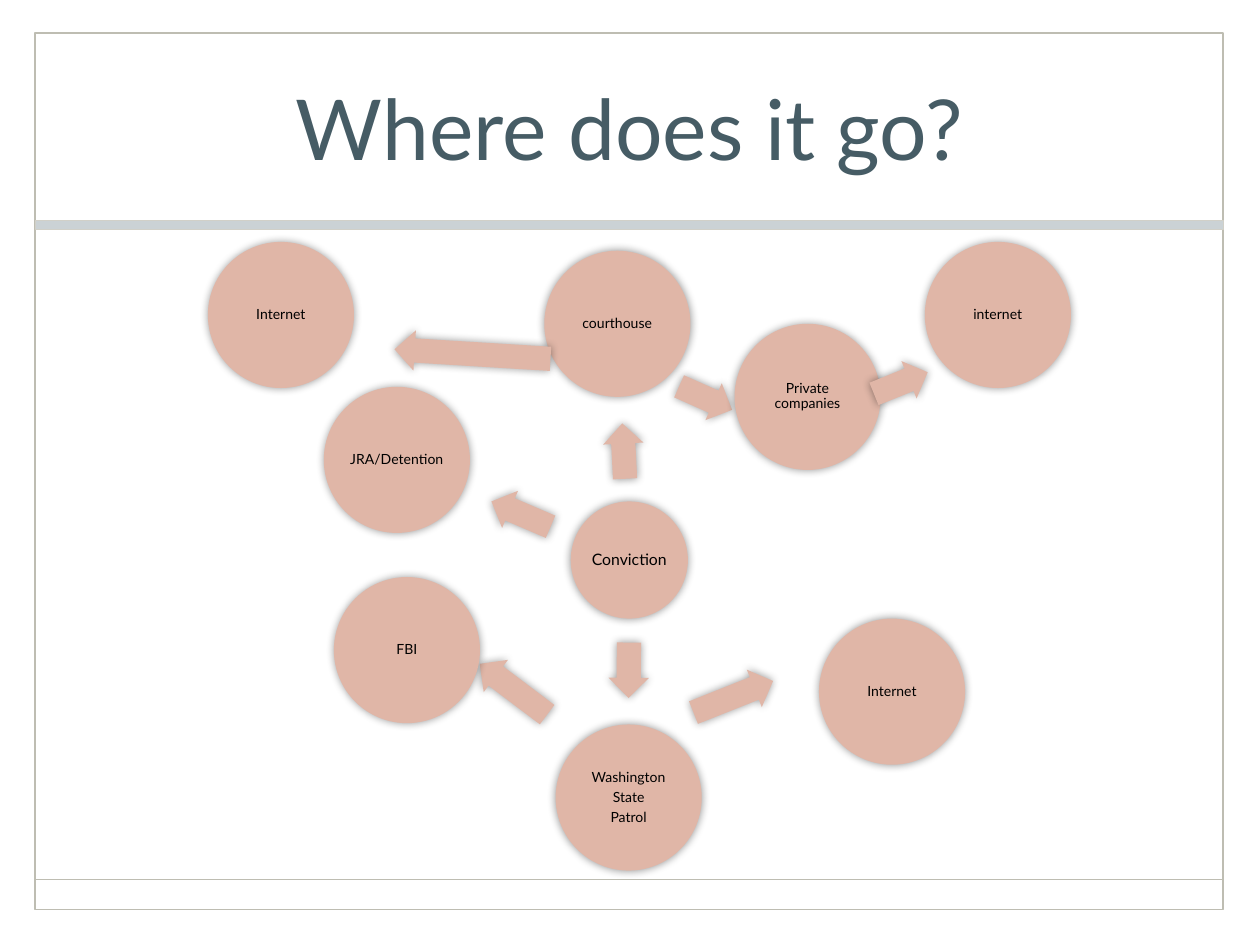
from lxml.etree import SubElement
from pptx import Presentation
from pptx.dml.color import RGBColor
from pptx.enum.shapes import MSO_CONNECTOR, MSO_SHAPE
from pptx.enum.text import MSO_ANCHOR, PP_ALIGN
from pptx.oxml.ns import qn
from pptx.util import Inches, Pt

FONT = "Lato"
FRAME = RGBColor(0xBE, 0xBD, 0xB2)
BAND = RGBColor(0xCB, 0xD2, 0xD5)
BAND_LINE = RGBColor(0xD1, 0xD0, 0xC8)
TITLE = RGBColor(0x46, 0x5C, 0x65)
SALMON = RGBColor(0xE0, 0xB6, 0xA7)
BLACK = RGBColor(0x00, 0x00, 0x00)

FRAME_LEFT, FRAME_WIDTH = 0.28, 9.43
HUB_SIZE, NODE_SIZE = 0.93, 1.16
ARROW_HEIGHT = 0.32

# Each step: arrow (left, top, width, rotation), then the circle it belongs to (left, top, label)
STEPS = [
    ((4.73, 3.42, 0.44, 267.1), (4.32, 1.99, "courthouse")),
    ((3.13, 2.65, 1.24, 183.5), (1.65, 1.92, "Internet")),
    ((5.37, 3.00, 0.46, 23.9), (5.83, 2.57, "Private companies")),
    ((5.48, 5.37, 0.68, 338.3), (6.50, 4.91, "Internet")),
    ((4.77, 5.16, 0.44, 90.4), (4.41, 5.75, "Washington\nState\nPatrol")),
    ((3.74, 5.31, 0.67, 217), (2.65, 4.58, "FBI")),
    ((6.92, 2.88, 0.46, 338), (7.34, 1.92, "internet")),
    ((3.88, 3.92, 0.51, 203.2), (2.57, 3.07, "JRA/Detention")),
]


def add_shape(slide, kind, left, top, width, height):
    shape = slide.shapes.add_shape(kind, Inches(left), Inches(top), Inches(width), Inches(height))
    shape.shadow.inherit = False
    return shape


def add_frame(slide):
    border = add_shape(slide, MSO_SHAPE.RECTANGLE, FRAME_LEFT, 0.26, FRAME_WIDTH, 6.96)
    border.fill.background()
    border.line.color.rgb = FRAME
    border.line.width = Pt(1)

    footer = slide.shapes.add_connector(
        MSO_CONNECTOR.STRAIGHT, Inches(FRAME_LEFT), Inches(6.98),
        Inches(FRAME_LEFT + FRAME_WIDTH), Inches(6.98))
    footer.line.color.rgb = FRAME
    footer.line.width = Pt(1)
    SubElement(footer._element.spPr, qn("a:effectLst"))

    band = add_shape(slide, MSO_SHAPE.RECTANGLE, FRAME_LEFT, 1.75, FRAME_WIDTH, 0.07)
    band.fill.solid()
    band.fill.fore_color.rgb = BAND
    band.line.color.rgb = BAND_LINE
    band.line.width = Pt(0.25)


def add_title(slide, text):
    box = slide.shapes.add_textbox(Inches(0.98), Inches(0.27), Inches(8.03), Inches(1.47))
    frame = box.text_frame
    frame.word_wrap = True
    frame.vertical_anchor = MSO_ANCHOR.MIDDLE
    frame.text = text
    paragraph = frame.paragraphs[0]
    paragraph.alignment = PP_ALIGN.CENTER
    paragraph.font.name = FONT
    paragraph.font.size = Pt(48)
    paragraph.font.color.rgb = TITLE


def style_glowing(shape):
    """Salmon fill, no line and a soft shadow centred behind the shape."""
    shape.fill.solid()
    shape.fill.fore_color.rgb = SALMON
    shape.line.fill.background()
    effects = shape._element.spPr.find(qn("a:effectLst"))
    shadow = SubElement(effects, qn("a:outerShdw"), blurRad=str(Pt(5)), dist="0", dir="0",
                        rotWithShape="0")
    color = SubElement(shadow, qn("a:srgbClr"), val="000000")
    SubElement(color, qn("a:alpha"), val="40000")


def add_circle(slide, left, top, label, size=NODE_SIZE, points=8):
    circle = add_shape(slide, MSO_SHAPE.OVAL, left, top, size, size)
    style_glowing(circle)
    frame = circle.text_frame
    frame.word_wrap = True
    frame.vertical_anchor = MSO_ANCHOR.MIDDLE
    frame.margin_left = frame.margin_right = Inches(0.01)
    frame.margin_top = frame.margin_bottom = Inches(0.01)
    frame.text = label
    for paragraph in frame.paragraphs:
        paragraph.alignment = PP_ALIGN.CENTER
        paragraph.line_spacing = 0.9
        paragraph.space_after = Pt(0.35 * points)
        paragraph.font.name = FONT
        paragraph.font.size = Pt(points)
        paragraph.font.color.rgb = BLACK


def add_arrow(slide, left, top, width, rotation):
    arrow = add_shape(slide, MSO_SHAPE.RIGHT_ARROW, left, top, width, ARROW_HEIGHT)
    arrow.adjustments[0] = 0.6
    arrow.adjustments[1] = 0.5
    arrow.rotation = rotation
    style_glowing(arrow)


def main():
    presentation = Presentation()
    presentation.slide_width = Inches(10)
    presentation.slide_height = Inches(7.5)
    slide = presentation.slides.add_slide(presentation.slide_layouts[6])

    add_frame(slide)
    add_title(slide, "Where does it go?")
    add_circle(slide, 4.53, 3.98, "Conviction", HUB_SIZE, 9)
    for arrow, circle in STEPS:
        add_arrow(slide, *arrow)
        add_circle(slide, *circle)

    presentation.save("out.pptx")


if __name__ == "__main__":
    main()
